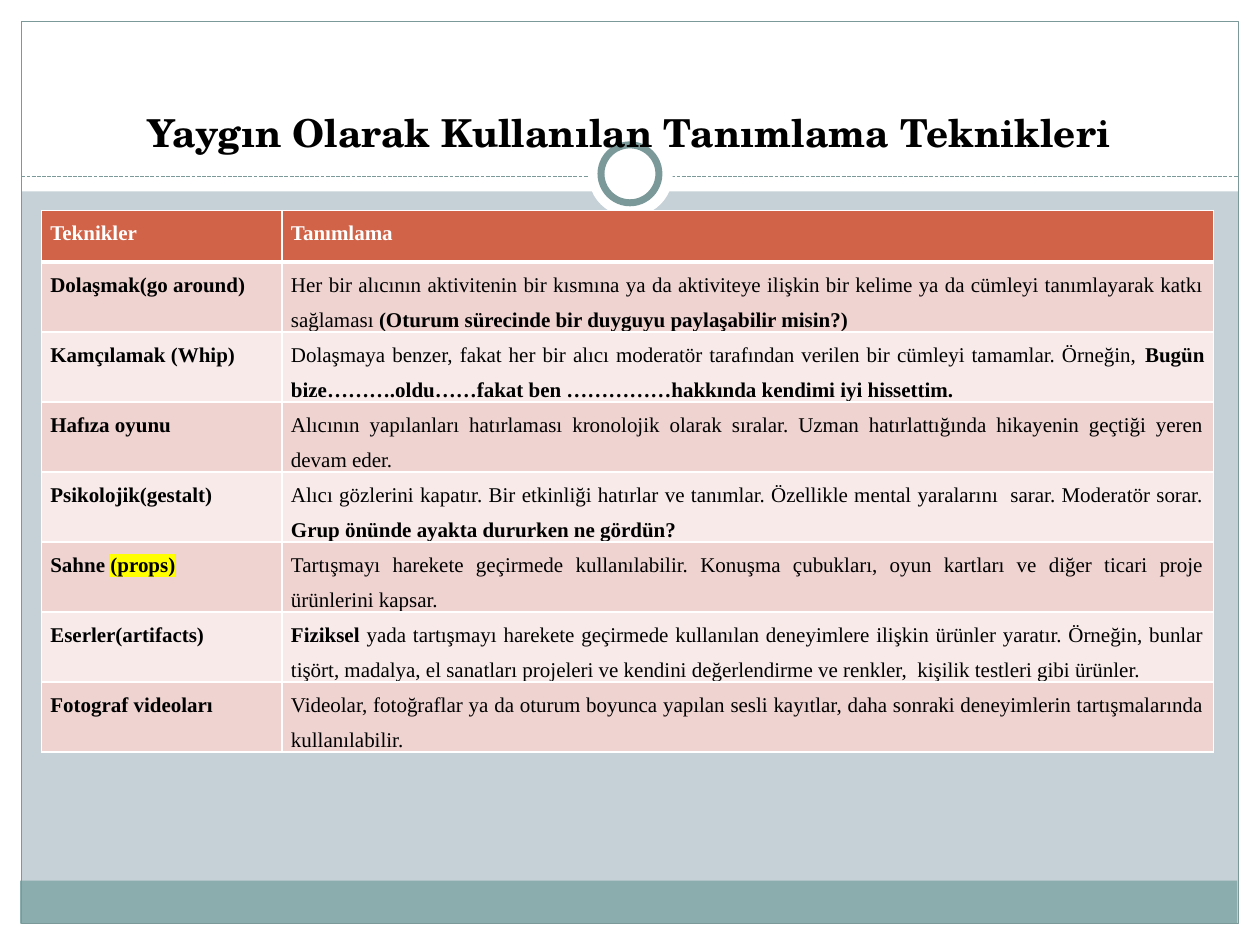
from lxml import etree
from pptx import Presentation
from pptx import util as u
from pptx.dml.color import RGBColor
from pptx.enum import dml, shapes, text
from pptx.oxml import parse_xml
from pptx.oxml.ns import nsdecls, qn

Inches, Pt = u.Inches, u.Pt
COLORS = {
    "background": "C5D1D7", "white": "FFFFFF", "black": "000000",
    "footer": "8CADAE", "frame": "7C999A", "header": "D16349",
    "dark_band": "EED3D0", "light_band": "F7EAE9", "highlight": "FFFF00",
}
RGB = {name: RGBColor.from_string(value) for name, value in COLORS.items()}

deck = Presentation()
deck.slide_width, deck.slide_height = Inches(10), Inches(7.5)
page = deck.slides.add_slide(deck.slide_layouts[5])
page.background.fill.solid()
page.background.fill.fore_color.rgb = RGB["background"]


def add_panel(kind, left, top, width, height, fill=None, line=None, weight=0.75):
    panel = page.shapes.add_shape(
        kind, Inches(left), Inches(top), Inches(width), Inches(height))
    panel.shadow.inherit = False
    if fill:
        panel.fill.solid()
        panel.fill.fore_color.rgb = RGB[fill]
    else:
        panel.fill.background()
    if line:
        panel.line.color.rgb = RGB[line]
        panel.line.width = Pt(weight)
    else:
        panel.line.fill.background()


def add_span(para, words, font, size, color, bold, highlight=False):
    span = para.add_run()
    span.text = words
    span.font.size, span.font.bold = Pt(size), bold
    span.font.name = font
    span.font.color.rgb = RGB[color]
    if highlight:
        mark = parse_xml(
            f'<a:highlight {nsdecls("a")}><a:srgbClr val="{COLORS["highlight"]}"/></a:highlight>')
        span.font._element.find(qn("a:solidFill")).addnext(mark)


# White margins, footer band and frame
RECT, OVAL = shapes.MSO_SHAPE.RECTANGLE, shapes.MSO_SHAPE.OVAL
for margin in [(0, 7.33, 10, 0.17), (0, 0, 10, 1.52),
               (0, 0, 0.17, 7.5), (9.83, 0, 0.17, 7.5)]:
    add_panel(RECT, *margin, fill="white")
add_panel(RECT, 0.16, 6.99, 9.66, 0.34, fill="footer")
add_panel(RECT, 0.17, 0.17, 9.66, 7.16, line="frame")

# Dashed divider with the ring on it
divider = page.shapes.add_connector(
    shapes.MSO_CONNECTOR.STRAIGHT, Inches(0.17), Inches(1.4), Inches(9.83), Inches(1.4))
divider.line.color.rgb = RGB["frame"]
divider.line.width = Pt(0.75)
divider.line.dash_style = dml.MSO_LINE.SQUARE_DOT
etree.SubElement(divider._element.spPr, qn("a:effectLst"))
add_panel(OVAL, 4.67, 1.05, 0.67, 0.67, fill="white")
add_panel(OVAL, 4.77, 1.15, 0.46, 0.46, fill="white", line="frame", weight=4)

# Title, in front of the decoration
title = page.shapes.title
title._element.getparent().append(title._element)
title.left, title.top = Inches(0.33), Inches(0.25)
title.width, title.height = Inches(9.33), Inches(1.53)
title.text_frame.vertical_anchor = text.MSO_ANCHOR.BOTTOM
title.text_frame.margin_bottom = Inches(0.55)
para = title.text_frame.paragraphs[0]
para.alignment = text.PP_ALIGN.CENTER
add_span(para, "Yaygın Olarak Kullanılan Tanımlama Teknikleri",
         "TeX Gyre Schola", 22, "black", True)

# Table text: each cell is a list of (words, bold)
rows = [
    ([("Teknikler", True)], [("Tanımlama", True)]),
    ([("Dolaşmak(go around)", True)],
     [("Her bir alıcının aktivitenin bir kısmına ya da aktiviteye ilişkin bir kelime "
       "ya da cümleyi tanımlayarak katkı sağlaması ", False),
      ("(Oturum sürecinde bir duyguyu paylaşabilir misin?)", True)]),
    ([("Kamçılamak (Whip)", True)],
     [("Dolaşmaya benzer, fakat her bir alıcı moderatör tarafından verilen bir "
       "cümleyi tamamlar. Örneğin, ", False),
      ("Bugün bize……….oldu……fakat ben ……………hakkında kendimi iyi hissettim.", True)]),
    ([("Hafıza oyunu ", True)],
     [("Alıcının yapılanları hatırlaması kronolojik olarak sıralar. Uzman "
       "hatırlattığında hikayenin geçtiği yeren devam eder.", False)]),
    ([("Psikolojik(gestalt)", True)],
     [("Alıcı gözlerini kapatır. Bir etkinliği hatırlar ve tanımlar. Özellikle mental "
       "yaralarını  sarar. Moderatör sorar.", False),
      (" Grup önünde ayakta dururken ne gördün?", True)]),
    ([("Sahne ", True), ("(props)", True)],
     [("Tartışmayı harekete geçirmede kullanılabilir. Konuşma çubukları, oyun kartları "
       "ve diğer ticari proje ürünlerini kapsar.", False)]),
    ([("Eserler(artifacts)", True)],
     [("Fiziksel ", True),
      ("yada tartışmayı harekete geçirmede kullanılan deneyimlere ilişkin ürünler "
       "yaratır. Örneğin, bunlar tişört, madalya, el sanatları projeleri ve kendini "
       "değerlendirme ve renkler,  kişilik testleri gibi ürünler.", False)]),
    ([("Fotograf videoları", True)],
     [("Videolar, fotoğraflar ya da oturum boyunca yapılan sesli kayıtlar, daha sonraki "
       "deneyimlerin tartışmalarında kullanılabilir. ", False)]),
]

# Table of techniques
ROW_HEIGHT = 0.41
table = page.shapes.add_table(
    len(rows), 2, Inches(0.33), Inches(1.67), Inches(9.3),
    Inches(ROW_HEIGHT * len(rows))).table
table.horz_banding = False
for column, width in zip(table.columns, (1.91, 7.39)):
    column.width = Inches(width)

for r, row in enumerate(rows):
    table.rows[r].height = Inches(ROW_HEIGHT)
    band = "header" if r == 0 else ("light_band", "dark_band")[r % 2]
    for c, spans in enumerate(row):
        cell = table.cell(r, c)
        cell.margin_left = cell.margin_right = Inches(0.07)
        cell.margin_top = cell.margin_bottom = 0
        cell.fill.solid()
        cell.fill.fore_color.rgb = RGB[band]
        para = cell.text_frame.paragraphs[0]
        para.alignment = text.PP_ALIGN.JUSTIFY
        para.line_spacing = 1.5
        for words, bold in spans:
            add_span(para, words, "Times New Roman", 12,
                     "white" if r == 0 else "black", bold, words == "(props)")
        # White borders, heavier between the header and the body
        weights = {"L": 1, "R": 1, "T": 3 if r == 1 else 1, "B": 3 if r == 0 else 1}
        for place, (side, weight) in enumerate(weights.items()):
            border = parse_xml(
                f'<a:ln{side} {nsdecls("a")} w="{Pt(weight)}"><a:solidFill>'
                f'<a:srgbClr val="{COLORS["white"]}"/></a:solidFill></a:ln{side}>')
            cell._tc.get_or_add_tcPr().insert(place, border)

deck.save("out.pptx")
